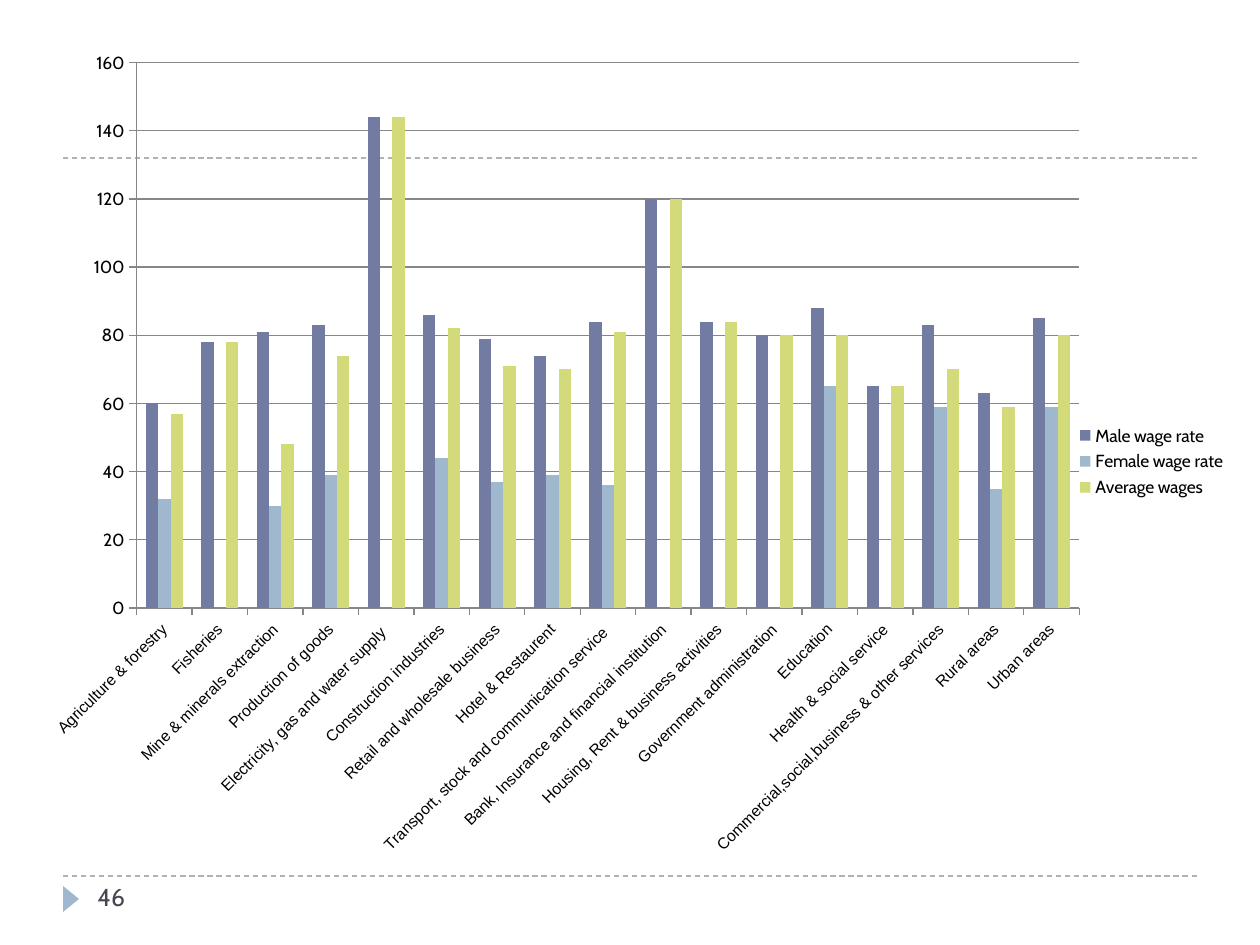
from lxml import etree
from pptx import Presentation
from pptx import util as u
from pptx.chart.data import CategoryChartData
from pptx.dml.color import RGBColor
from pptx.enum import chart as ch, dml, shapes, text
from pptx.oxml import parse_xml
from pptx.oxml.ns import nsdecls, qn

PX = 914400 / 126
HUES = {"male": "727CA3", "sky": "9FB8CD", "lime": "D2DA7A", "dash": "B2B2B2",
        "ink": "000000", "page": "464653", "grid": "878787"}

ROWS = [
    ("Agriculture & forestry", 60, 32, 57),
    ("Fisheries", 78, None, 78),
    ("Mine & minerals extraction", 81, 30, 48),
    ("Production of goods", 83, 39, 74),
    ("Electricity, gas and water supply ", 144, None, 144),
    ("Construction industries", 86, 44, 82),
    ("Retail and wholesale business", 79, 37, 71),
    ("Hotel & Restaurent", 74, 39, 70),
    ("Transport, stock and communication service ", 84, 36, 81),
    ("Bank, Insurance and financial institution", 120, None, 120),
    ("Housing, Rent & business activities", 84, None, 84),
    ("Government administration", 80, None, 80),
    ("Education", 88, 65, 80),
    ("Health & social service", 65, None, 65),
    ("Commercial,social,business & other services", 83, 59, 70),
    ("Rural areas", 63, 35, 59),
    ("Urban areas", 85, 59, 80),
]
SERIES = [("Male wage rate", "male"), ("Female wage rate", "sky"),
          ("Average wages", "lime")]


def hue(name):
    return RGBColor.from_string(HUES[name])


def emu(*vals):
    return [u.Emu(round(v * PX)) for v in vals]


class Deck:
    def __init__(self, wide, high):
        self.prs = Presentation()
        self.prs.slide_width, self.prs.slide_height = emu(wide, high)
        self.slide = self.prs.slides.add_slide(self.prs.slide_layouts[6])

    def font(self, font, size, color="ink", face="Cabin"):
        font.name, font.size, font.bold = face, u.Pt(size), False
        font.color.rgb = hue(color)

    def rule(self, left, right, y):
        """Draw a dashed horizontal line."""
        line = self.slide.shapes.add_connector(
            shapes.MSO_CONNECTOR.STRAIGHT, *emu(left, y, right, y))
        line.line.color.rgb = hue("dash")
        line.line.width = u.Pt(0.75)
        line.line.dash_style = dml.MSO_LINE.DASH
        etree.SubElement(line._element.spPr, qn("a:effectLst"))

    def arrow(self, *box):
        """Draw a triangle that points right."""
        mark = self.slide.shapes.add_shape(
            shapes.MSO_SHAPE.ISOSCELES_TRIANGLE, *emu(*box))
        mark.rotation = 90
        mark.shadow.inherit = False
        mark.fill.solid()
        mark.fill.fore_color.rgb = hue("sky")
        mark.line.fill.background()

    def label(self, words, size, color, *box):
        frame = self.slide.shapes.add_textbox(*emu(*box)).text_frame
        frame.word_wrap = True
        frame.vertical_anchor = text.MSO_ANCHOR.TOP
        para = frame.paragraphs[0]
        para.text = words
        self.font(para.font, size, color)

    def columns(self, rows, series, *box):
        names, *cols = zip(*rows)
        data = CategoryChartData()
        data.categories = names
        for (name, _), vals in zip(series, cols):
            data.add_series(name, vals)
        chart = self.slide.shapes.add_chart(
            ch.XL_CHART_TYPE.COLUMN_CLUSTERED, *emu(*box), data).chart
        self.font(chart.font, 10)
        chart.has_title = False
        chart.has_legend = True
        chart.legend.position = ch.XL_LEGEND_POSITION.RIGHT
        chart.legend.include_in_layout = False
        plot = chart.plots[0]
        plot.gap_width, plot.overlap = 150, 0
        plot.vary_by_categories = False
        for bar, (_, color) in zip(plot.series, series):
            bar.format.fill.solid()
            bar.format.fill.fore_color.rgb = hue(color)
            bar.invert_if_negative = False
        self.axes(chart)
        self.place(chart, x=0.095, y=0.013, w=0.774, h=0.666)

    def axes(self, chart):
        cat, val = chart.category_axis, chart.value_axis
        val.minimum_scale, val.maximum_scale, val.major_unit = 0, 160, 20
        val.has_major_gridlines = True
        for part in (cat, val, val.major_gridlines):
            part.format.line.color.rgb = hue("grid")
            part.format.line.width = u.Pt(0.75)
        for axis in (cat, val):
            axis.major_tick_mark = ch.XL_TICK_MARK.OUTSIDE
        self.font(cat.tick_labels.font, 9, face="Arial")
        body = cat._element.find(qn("c:txPr")).find(qn("a:bodyPr"))
        body.set("rot", "-2700000")
        body.set("vert", "horz")

    def place(self, chart, **spots):
        """Fix the inner plot area as fractions of the chart."""
        area = chart._chartSpace.chart.plotArea
        for old in area.findall(qn("c:layout")):
            area.remove(old)
        sizes = "".join(f'<c:{k} val="{v}"/>' for k, v in spots.items())
        area.insert(0, parse_xml(
            f'<c:layout {nsdecls("c")}><c:manualLayout>'
            '<c:layoutTarget val="inner"/><c:xMode val="edge"/>'
            f'<c:yMode val="edge"/>{sizes}</c:manualLayout></c:layout>'))


def main():
    deck = Deck(1260, 945)
    for y in (876, 158):
        deck.rule(63, 1197, y)
    deck.arrow(58, 891, 26, 16)
    deck.label("46", 14, "page", 85, 876, 273, 50)
    deck.columns(ROWS, SERIES, 21, 52, 1218, 819)
    deck.prs.save("out.pptx")


if __name__ == "__main__":
    main()
